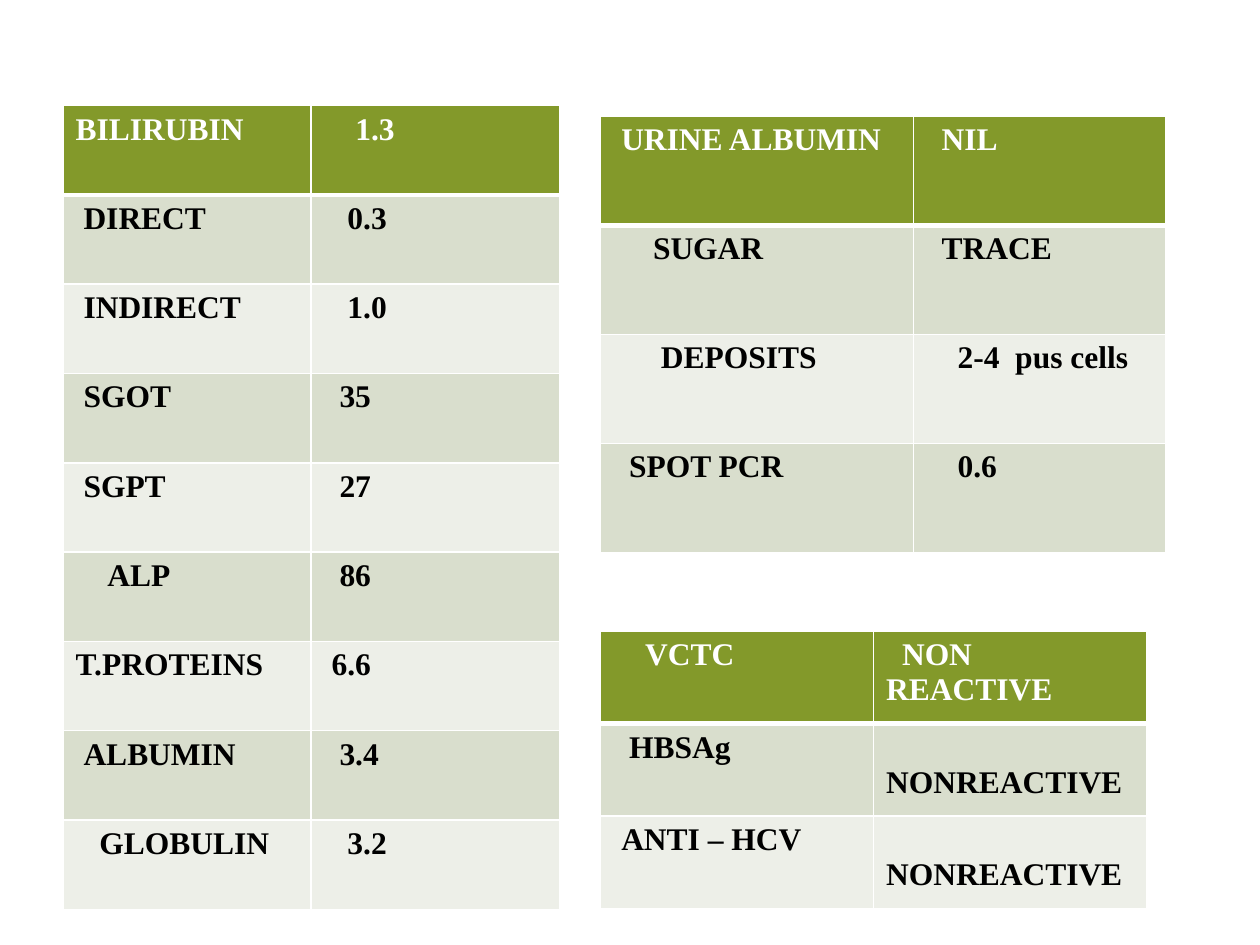
from lxml.etree import SubElement
from pptx import Presentation
from pptx.dml.color import RGBColor
from pptx.oxml.ns import qn
from pptx.util import Cm, Pt

COLORS = {
    "header": "83992A",
    "odd": "D9DECD",
    "even": "EDEFE8",
    "white": "FFFFFF",
    "black": "000000",
}
INDENT_STEP = 0.16  # cm, one step of first-line indent

# Each cell is (text, indent steps)
liver_rows = [
    [("BILIRUBIN", 0), ("1.3", 4)],
    [("DIRECT", 1), ("0.3", 3)],
    [("INDIRECT", 1), ("1.0", 3)],
    [("SGOT", 1), ("35", 2)],
    [("SGPT", 1), ("27", 2)],
    [("ALP", 4), ("86", 2)],
    [("T.PROTEINS", 0), ("6.6", 1)],
    [("ALBUMIN", 1), ("3.4", 2)],
    [("GLOBULIN", 3), ("3.2", 3)],
]
urine_rows = [
    [("URINE ALBUMIN", 1), ("NIL", 2)],
    [("SUGAR", 5), ("TRACE", 2)],
    [("DEPOSITS", 6), ("2-4  pus cells", 4)],
    [("SPOT PCR", 2), ("0.6", 4)],
]
serology_rows = [
    [("VCTC", 4), ("NON REACTIVE", 2)],
    [("HBSAg", 2), ("NONREACTIVE", 0)],
    [("ANTI – HCV", 1), ("NONREACTIVE", 0)],
]

# Left, top, column widths and row height in cm
tables = [
    (liver_rows, 1.27, 2.13, (5.0, 5.02), 1.8),
    (urine_rows, 12.11, 2.34, (6.3, 5.08), 2.2),
    (serology_rows, 12.11, 12.73, (5.5, 5.5), 1.86),
]


def add_border(cell, side, width):
    line = SubElement(cell._tc.get_or_add_tcPr(), qn(f"a:ln{side}"), w=str(Pt(width)))
    fill = SubElement(line, qn("a:solidFill"))
    SubElement(fill, qn("a:srgbClr"), val=COLORS["white"])


def fill_cell(cell, text, steps, row_index):
    is_header = row_index == 0
    # Borders, with a thick rule under the header
    for side in "LRTB":
        is_rule = (side == "B" and row_index == 0) or (side == "T" and row_index == 1)
        add_border(cell, side, 3 if is_rule else 1)
    fill_name = "header" if is_header else ("odd" if row_index % 2 else "even")
    cell.fill.solid()
    cell.fill.fore_color.rgb = RGBColor.from_string(COLORS[fill_name])

    # Text
    cell.text_frame.text = text
    paragraph = cell.text_frame.paragraphs[0]
    paragraph._p.get_or_add_pPr().set("indent", str(Cm(steps * INDENT_STEP)))
    font = paragraph.runs[0].font
    font.name = "Times New Roman"
    font.size = Pt(18)
    font.bold = True
    font.color.rgb = RGBColor.from_string(COLORS["white" if is_header else "black"])
    # These results sit on the second line of their row
    if text == "NONREACTIVE":
        cell.margin_top = Cm(0.83)


presentation = Presentation()
presentation.slide_width = Cm(25.4)
presentation.slide_height = Cm(19.05)
slide = presentation.slides.add_slide(presentation.slide_layouts[6])

# Result tables
for rows, left, top, widths, row_height in tables:
    shape = slide.shapes.add_table(
        len(rows), len(widths), Cm(left), Cm(top),
        Cm(sum(widths)), Cm(row_height * len(rows)),
    )
    table = shape.table
    for column, width in zip(table.columns, widths):
        column.width = Cm(width)
    for row_index, row in enumerate(rows):
        table.rows[row_index].height = Cm(row_height)
        for column_index, (text, steps) in enumerate(row):
            fill_cell(table.cell(row_index, column_index), text, steps, row_index)

presentation.save("out.pptx")
